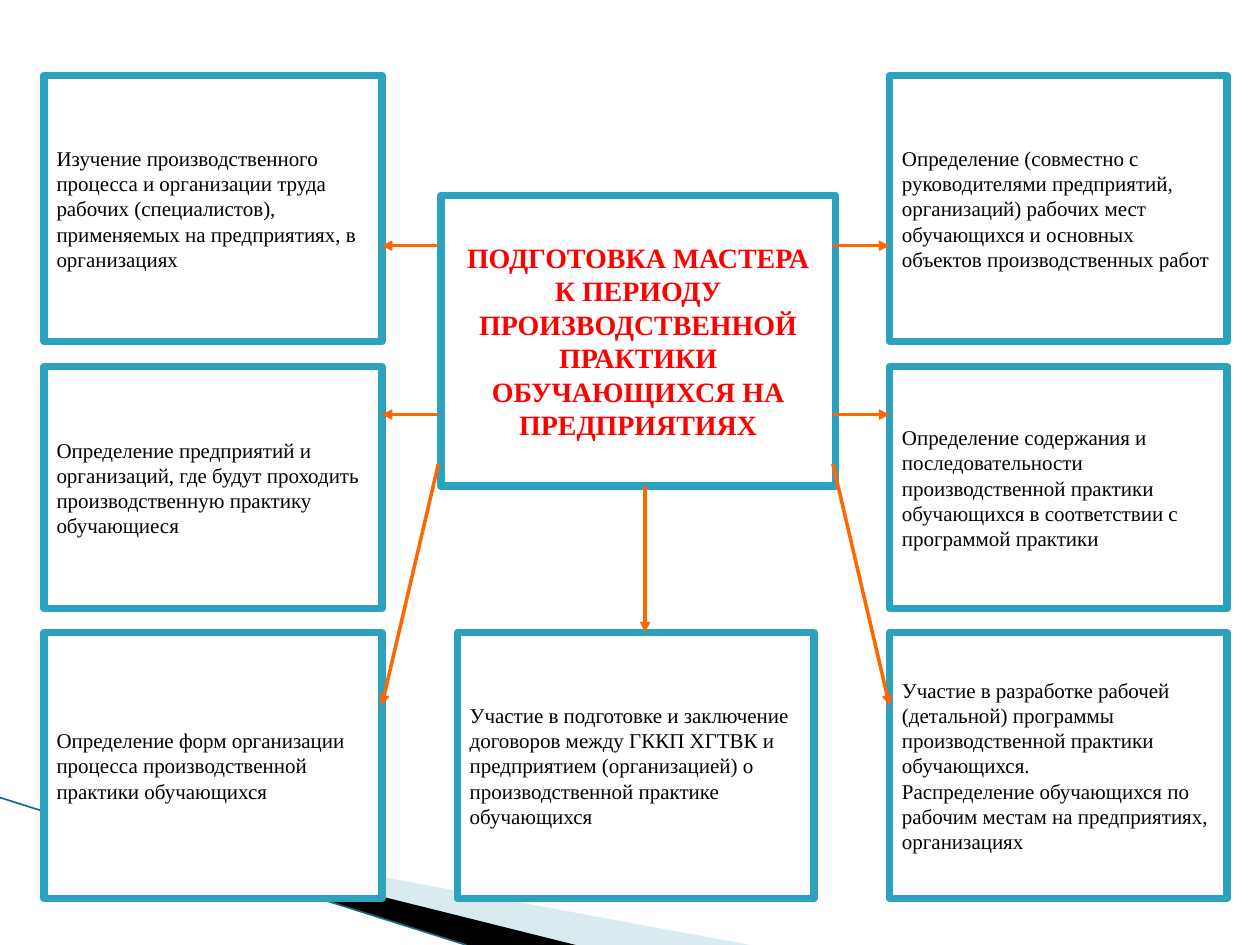
from lxml import etree
from pptx import Presentation
from pptx.dml.color import RGBColor
from pptx.enum.shapes import MSO_CONNECTOR, MSO_SHAPE
from pptx.enum.text import MSO_ANCHOR, MSO_AUTO_SIZE, PP_ALIGN
from pptx.oxml.ns import qn
from pptx.util import Inches, Pt

STRAIGHT = MSO_CONNECTOR.STRAIGHT
RECTANGLE = MSO_SHAPE.RECTANGLE
MIDDLE = MSO_ANCHOR.MIDDLE
NO_FIT = MSO_AUTO_SIZE.NONE
LEFT, CENTER = PP_ALIGN.LEFT, PP_ALIGN.CENTER

FONT = "Times New Roman"
COLORS = {
    "white": "FFFFFF", "black": "000000", "title": "FF0000",
    "border": "2DA2BF", "arrow": "FF6600", "wedge": "A0CBDC", "edge": "1A6A80",
}

# Grid: (left, width) of columns and (top, height) of rows, in inches
COLUMNS = [(0.35, 2.68), (3.63, 2.83), (7.06, 2.68)]
ROWS = [(0.6, 2.11), (2.91, 1.92), (5.02, 2.11)]
CENTER_BOX = (3.5, 1.55, 3.13, 2.31)

TITLE = "ПОДГОТОВКА МАСТЕРА К ПЕРИОДУ ПРОИЗВОДСТВЕННОЙ ПРАКТИКИ ОБУЧАЮЩИХСЯ НА ПРЕДПРИЯТИЯХ"
# (column, row, paragraphs)
TASKS = [
    (0, 0, ["Изучение производственного процесса и организации труда рабочих "
            "(специалистов), применяемых на предприятиях, в организациях"]),
    (0, 1, ["Определение предприятий и организаций, где будут проходить "
            "производственную практику обучающиеся"]),
    (0, 2, ["Определение форм организации процесса производственной практики обучающихся"]),
    (1, 2, ["Участие в подготовке и заключение договоров между ГККП ХГТВК и "
            "предприятием (организацией) о производственной практике обучающихся"]),
    (2, 0, ["Определение (совместно с руководителями предприятий, организаций) "
            "рабочих мест обучающихся и основных объектов производственных работ"]),
    (2, 1, ["Определение содержания и последовательности производственной практики "
            "обучающихся в соответствии с программой практики"]),
    (2, 2, ["Участие в разработке рабочей (детальной) программы производственной "
            "практики обучающихся.",
            "Распределение обучающихся по рабочим местам на предприятиях, организациях"]),
]


def color(name):
    return RGBColor.from_string(COLORS[name])


def add_line(slide, start, end, color_name, width, arrow=False):
    points = [Inches(value) for value in (*start, *end)]
    connector = slide.shapes.add_connector(STRAIGHT, *points)
    connector.line.color.rgb = color(color_name)
    connector.line.width = Pt(width)
    if arrow:
        line = connector.line._get_or_add_ln()
        etree.SubElement(line, qn("a:tailEnd"), type="triangle")
    etree.SubElement(connector._element.spPr, qn("a:effectLst"))


def add_wedge(slide, points, color_name, opacity=None):
    corners = [(Inches(x), Inches(y)) for x, y in points]
    builder = slide.shapes.build_freeform(*corners[0])
    builder.add_line_segments(corners[1:], close=True)
    shape = builder.convert_to_shape()
    shape.shadow.inherit = False
    shape.line.fill.background()
    shape.fill.solid()
    shape.fill.fore_color.rgb = color(color_name)
    if opacity:
        fill = shape._element.spPr.find(qn("a:solidFill"))
        etree.SubElement(fill[0], qn("a:alpha"), val=str(opacity * 1000))


def add_background(slide):
    add_wedge(slide, [(0.55, 6.5), (5.95, 7.5), (4.56, 7.5)], "wedge", 40)
    add_wedge(slide, [(0.53, 6.49), (4.57, 7.5), (3.7, 7.5)], "black")
    add_line(slide, (0, 6.33), (3.7, 7.5), "edge", 0.95)


def format_box(shape, paragraphs, size, color_name, alignment, bold=False):
    """White box with a thick rounded-join border and centred-in-height text."""
    shape.fill.solid()
    shape.fill.fore_color.rgb = color("white")
    shape.line.color.rgb = color("border")
    shape.line.width = Pt(4.33)
    etree.SubElement(shape.line._get_or_add_ln(), qn("a:round"))
    frame = shape.text_frame
    frame.word_wrap = True
    frame.auto_size = NO_FIT
    frame.vertical_anchor = MIDDLE
    for index, text in enumerate(paragraphs):
        paragraph = frame.add_paragraph() if index else frame.paragraphs[0]
        paragraph.alignment = alignment
        run = paragraph.add_run()
        run.text = text
        run.font.name = FONT
        run.font.size = Pt(size)
        run.font.bold = bold
        run.font.color.rgb = color(color_name)


def add_center(slide, box):
    title = slide.shapes.title
    title.left, title.top, title.width, title.height = map(Inches, box)
    format_box(title, [TITLE], 16, "title", CENTER, bold=True)


def add_tasks(slide):
    for column, row, paragraphs in TASKS:
        left, width = COLUMNS[column]
        top, height = ROWS[row]
        shape = slide.shapes.add_shape(RECTANGLE, *map(Inches, (left, top, width, height)))
        shape.shadow.inherit = False
        format_box(shape, paragraphs, 12, "black", LEFT)


def add_arrows(slide, box):
    left, top, width, height = box
    left_edge = sum(COLUMNS[0])
    right_edge = COLUMNS[2][0]
    # Matching arrows to both side columns: (start y, end y)
    for start_y, end_y in [(1.95, 1.95), (3.29, 3.29), (3.68, 5.6)]:
        add_line(slide, (left - 0.02, start_y), (left_edge, end_y), "arrow", 2, arrow=True)
        add_line(slide, (left + width - 0.02, start_y), (right_edge, end_y),
                 "arrow", 2, arrow=True)
    # Downward arrow, slightly right of the centre
    add_line(slide, (5.12, top + height), (5.12, ROWS[2][0]), "arrow", 2, arrow=True)


def main():
    presentation = Presentation()
    presentation.slide_width = Inches(10)
    presentation.slide_height = Inches(7.5)
    slide = presentation.slides.add_slide(presentation.slide_layouts[5])
    add_background(slide)
    add_center(slide, CENTER_BOX)
    add_tasks(slide)
    add_arrows(slide, CENTER_BOX)
    presentation.save("out.pptx")


if __name__ == "__main__":
    main()
